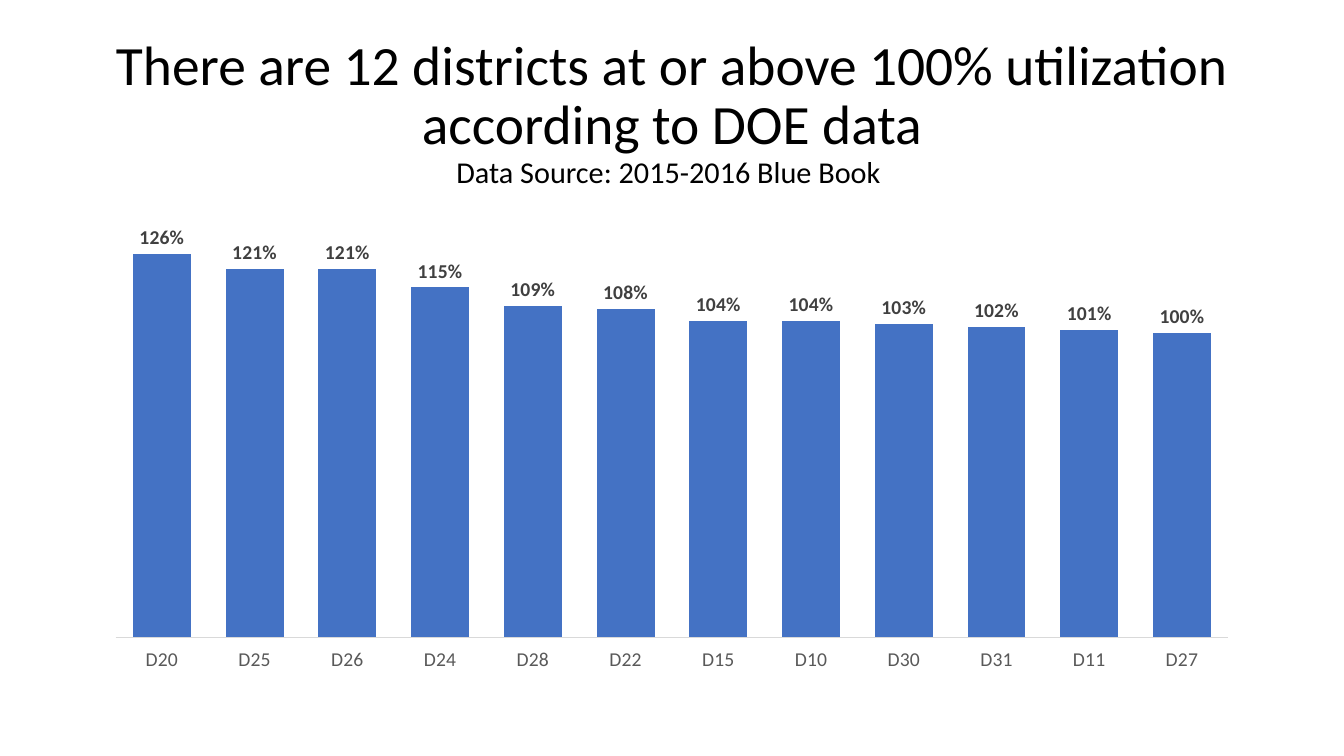
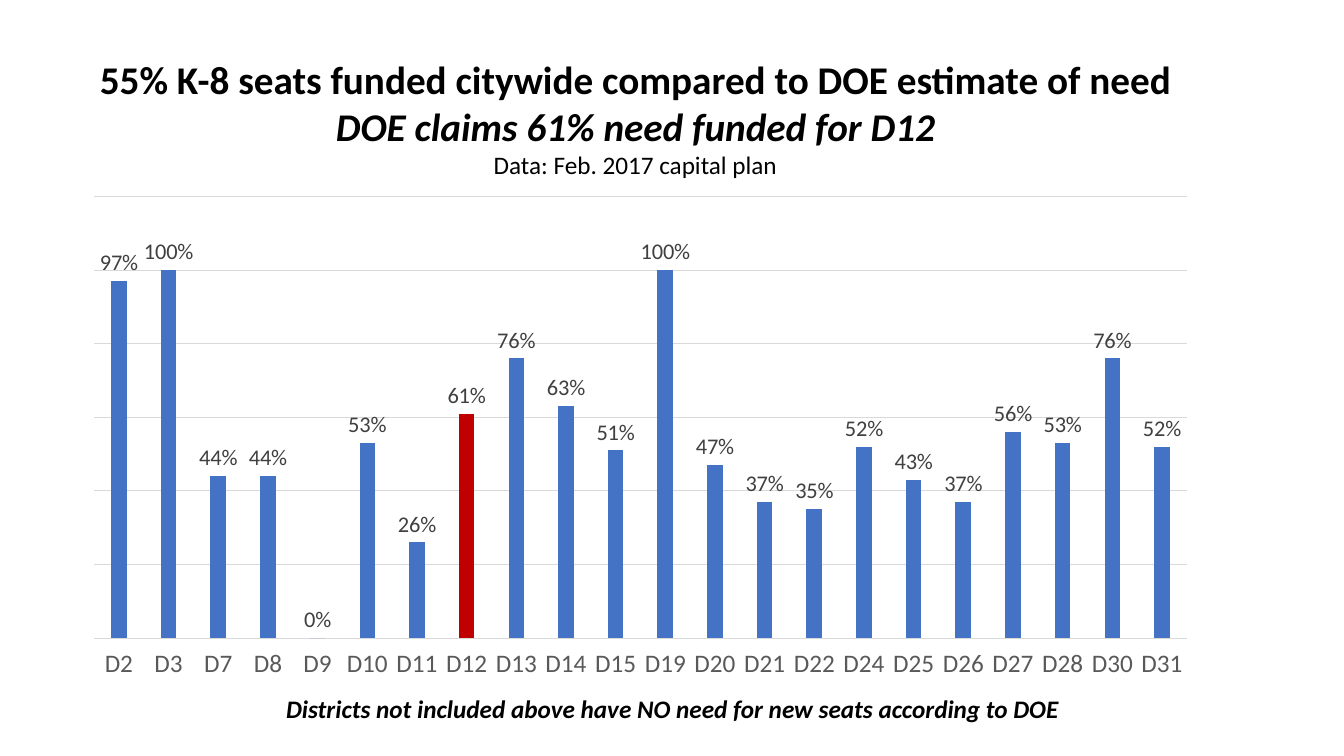
from pptx import Presentation
from pptx.chart.data import CategoryChartData
from pptx.dml.color import RGBColor
from pptx.enum.chart import XL_CHART_TYPE as ChartType, XL_LABEL_POSITION as LabelPosition
from pptx.enum.chart import XL_TICK_LABEL_POSITION as TickLabels, XL_TICK_MARK as TickMark
from pptx.enum.text import MSO_ANCHOR as Anchor, PP_ALIGN as Align
from pptx.util import Pt

FONT = "Calibri"
COLORS = {
    "text": "000000",
    "bar": "4472C4",
    "highlight": "C00000",
    "rule": "D9D9D9",
    "category": "595959",
    "label": "404040",
}
COLORS = {name: RGBColor.from_string(value) for name, value in COLORS.items()}


def add_text(slide, box, lines, align=Align.CENTER, anchor=Anchor.TOP, spacing=1.0):
    frame = slide.shapes.add_textbox(*map(Pt, box)).text_frame
    frame.word_wrap = True
    frame.vertical_anchor = anchor
    for index, (text, size, bold, italic) in enumerate(lines):
        paragraph = frame.add_paragraph() if index else frame.paragraphs[0]
        paragraph.text = text
        paragraph.alignment = align
        paragraph.line_spacing = spacing
        font = paragraph.font
        font.name, font.size, font.bold, font.italic = FONT, Pt(size), bold, italic
        font.color.rgb = COLORS["text"]


def add_percent_chart(slide, box, percents, top, gap, category_size, label_size, bold, grid):
    data = CategoryChartData(number_format="0%")
    data.categories = list(percents)
    data.add_series("Series 1", [percent / 100 for percent in percents.values()])
    chart = slide.shapes.add_chart(ChartType.COLUMN_CLUSTERED, *map(Pt, box), data).chart
    chart.has_legend = False
    chart.has_title = False
    chart.font.name, chart.font.size = FONT, Pt(10)
    chart.font.color.rgb = COLORS["text"]

    districts = chart.category_axis
    districts.major_tick_mark = districts.minor_tick_mark = TickMark.NONE
    districts.tick_label_position = TickLabels.LOW
    districts.format.line.color.rgb = COLORS["rule"]
    districts.format.line.width = Pt(0.75)
    district_font = districts.tick_labels.font
    district_font.name, district_font.size = FONT, Pt(category_size)
    district_font.color.rgb = COLORS["category"]

    scale = chart.value_axis
    scale.visible = False
    scale.minimum_scale, scale.maximum_scale, scale.major_unit = 0, top, 0.2
    scale.has_major_gridlines = grid
    if grid:
        scale.major_gridlines.format.line.color.rgb = COLORS["rule"]
        scale.major_gridlines.format.line.width = Pt(0.75)

    plot = chart.plots[0]
    plot.vary_by_categories = False
    plot.gap_width, plot.overlap = gap, -27
    bars = plot.series[0]
    bars.invert_if_negative = False
    bars.format.fill.solid()
    bars.format.fill.fore_color.rgb = COLORS["bar"]

    labels = bars.data_labels
    labels.show_value = True
    labels.position = LabelPosition.OUTSIDE_END
    labels.number_format, labels.number_format_is_linked = "0%", False
    labels.font.name, labels.font.size, labels.font.bold = FONT, Pt(label_size), bold
    labels.font.color.rgb = COLORS["label"]
    return bars


prs = Presentation()
prs.slide_width, prs.slide_height = Pt(960), Pt(540)
blank = prs.slide_layouts[6]

utilization = {
    "D20": 126, "D25": 121, "D26": 121, "D24": 115, "D28": 109, "D22": 108,
    "D15": 104, "D10": 104, "D30": 103, "D31": 102, "D11": 101, "D27": 100,
}
utilization_slide = prs.slides.add_slide(blank)
add_text(
    utilization_slide, (66, 28.8, 828, 104.4),
    [
        ("There are 12 districts at or above 100% utilization according to DOE data", 39.6, False, False),
        ("Data Source: 2015-2016 Blue Book ", 21.6, False, False),
    ],
    anchor=Anchor.MIDDLE, spacing=0.9,
)
add_percent_chart(
    utilization_slide, (66, 144, 828, 342.6), utilization,
    top=1.4, gap=60, category_size=14, label_size=14, bold=True, grid=False,
)

funded = {
    "D2": 97, "D3": 100, "D7": 44, "D8": 44, "D9": 0, "D10": 53, "D11": 26, "D12": 61,
    "D13": 76, "D14": 63, "D15": 51, "D19": 100, "D20": 47, "D21": 37, "D22": 35,
    "D24": 52, "D25": 43, "D26": 37, "D27": 56, "D28": 53, "D30": 76, "D31": 52,
}
funding_slide = prs.slides.add_slide(blank)
funded_bars = add_percent_chart(
    funding_slide, (51, 133.2, 813, 358.6), funded,
    top=1.2, gap=219, category_size=18, label_size=16, bold=False, grid=True,
)
district_12 = funded_bars.points[list(funded).index("D12")].format.fill
district_12.solid()
district_12.fore_color.rgb = COLORS["highlight"]
add_text(
    funding_slide, (197.3, 491.8, 740, 40),
    [("Districts not included above have NO need for new seats according to DOE", 18, True, True)],
    align=Align.LEFT,
)
add_text(
    funding_slide, (51, 36, 805.7, 97.2),
    [
        ("55% K-8 seats funded citywide compared to DOE estimate of need", 28, True, False),
        ("DOE claims 61% need funded for D12", 28, True, True),
        ("Data: Feb. 2017 capital plan", 18, False, False),
    ],
)

prs.save("out.pptx")
